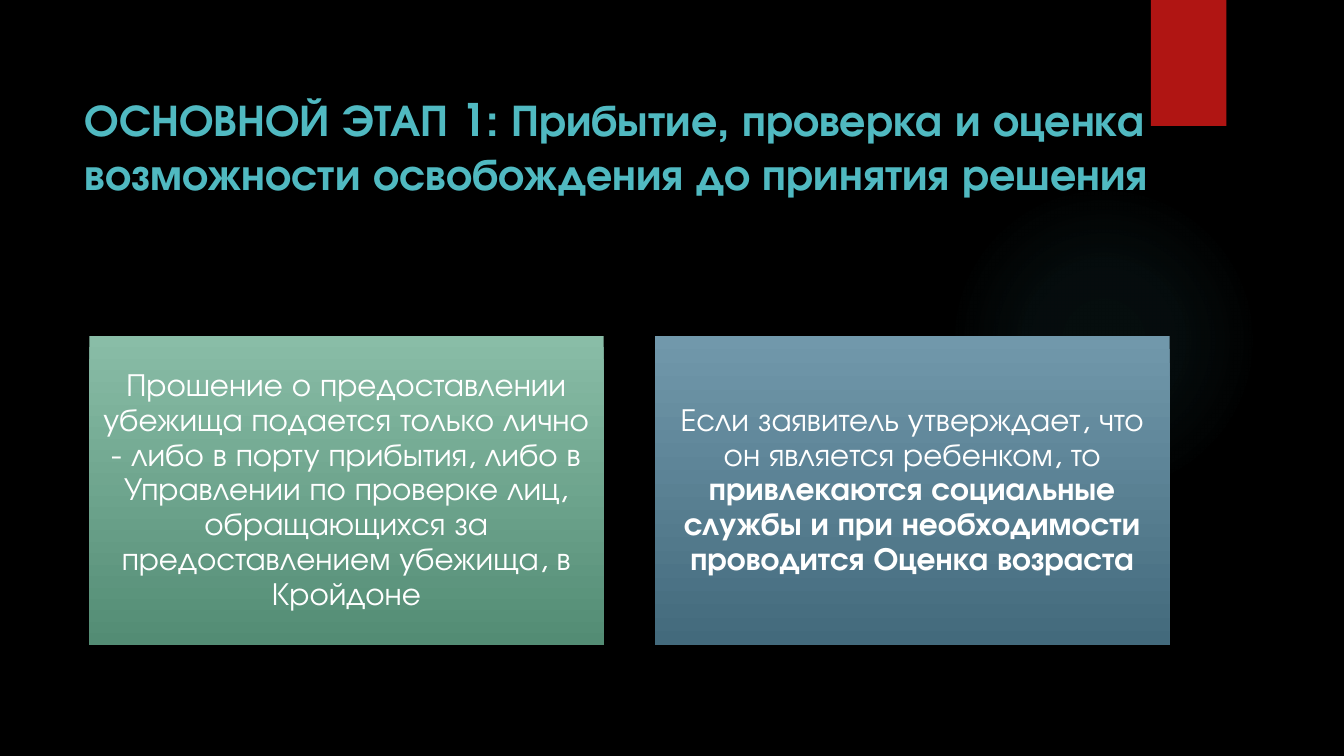
from pptx import Presentation
from pptx import util as u
from pptx.dml.color import RGBColor
from pptx.enum import shapes, text
from pptx.oxml import parse_xml
from pptx.oxml.ns import nsdecls, qn

COLORS = {
    "background": "000000",
    "accent": "50B9C1",
    "tab": "B01513",
    "text": "FFFFFF",
    "green_top": "89BDA7",
    "green_bottom": "538C74",
    "blue_top": "7198AB",
    "blue_bottom": "436A7C",
}
LINEAR_DOWN = '<a:lin ang="5400000" scaled="0"/>'
FROM_CENTRE = ('<a:path path="circle"><a:fillToRect l="50000" t="50000" '
               'r="50000" b="50000"/></a:path>')

CARD_LEFT, CARD_TOP, CARD_WIDTH, CARD_HEIGHT, CARD_GAP = 85, 320, 490, 294, 49
CARDS = [
    ("green", [
        ("Прошение о предоставлении убежища подается только лично - либо в порту "
         "прибытия, либо в Управлении по проверке лиц, обращающихся за "
         "предоставлением убежища, в Кройдоне", False),
    ]),
    ("blue", [
        ("Если заявитель утверждает, что он является ребенком, то ", False),
        ("привлекаются социальные службы и при необходимости проводится "
         "Оценка возраста", True),
    ]),
]


class SlideBuilder:
    FONT = "TeX Gyre Adventor"
    EMU_PER_PX = 9525

    def __init__(self, presentation):
        presentation.slide_width = self.px(1280)
        presentation.slide_height = self.px(720)
        self.slide = presentation.slides.add_slide(presentation.slide_layouts[5])
        fill = self.slide.background.fill
        fill.solid()
        fill.fore_color.rgb = self.color("background")

    def px(self, length):
        return u.Emu(length * self.EMU_PER_PX)

    def color(self, name):
        return RGBColor.from_string(COLORS[name])

    def style_font(self, font, size, color):
        font.name = self.FONT
        font.size = u.Pt(size)
        font.color.rgb = self.color(color)

    def title(self, wording, *box):
        title = self.slide.shapes.title
        title.left, title.top, title.width, title.height = map(self.px, box)
        frame = title.text_frame
        frame.text = wording
        frame.word_wrap = True
        frame.auto_size = text.MSO_AUTO_SIZE.NONE
        frame.vertical_anchor = text.MSO_ANCHOR.TOP
        paragraph = frame.paragraphs[0]
        paragraph.alignment = text.PP_ALIGN.LEFT
        self.style_font(paragraph.font, 32, "accent")
        paragraph.font.bold = True

    def shape(self, kind, *box):
        shape = self.slide.shapes.add_shape(kind, *map(self.px, box))
        shape.shadow.inherit = False
        shape.line.fill.background()
        return shape

    def gradient(self, shape, stops, direction):
        """Fill with (position %, colour name, opacity %) stops."""
        stop_xml = "".join(
            f'<a:gs pos="{position * 1000}"><a:srgbClr val="{COLORS[name]}">'
            f'<a:alpha val="{opacity * 1000}"/></a:srgbClr></a:gs>'
            for position, name, opacity in stops)
        shape.fill.background()
        properties = shape.element.spPr
        properties.replace(properties.find(qn("a:noFill")), parse_xml(
            f'<a:gradFill {nsdecls("a")} rotWithShape="1">'
            f'<a:gsLst>{stop_xml}</a:gsLst>{direction}</a:gradFill>'))

    def glow(self, *box):
        oval = self.shape(shapes.MSO_SHAPE.OVAL, *box)
        stops = [(0, "accent", 7), (36, "accent", 6), (69, "accent", 0)]
        self.gradient(oval, stops, FROM_CENTRE)

    def tab(self, *box):
        tab = self.shape(shapes.MSO_SHAPE.RECTANGLE, *box)
        tab.fill.solid()
        tab.fill.fore_color.rgb = self.color("tab")

    def card(self, tone, runs, *box):
        card = self.shape(shapes.MSO_SHAPE.RECTANGLE, *box)
        stops = [(0, f"{tone}_top", 100), (100, f"{tone}_bottom", 100)]
        self.gradient(card, stops, LINEAR_DOWN)
        frame = card.text_frame
        frame.word_wrap = True
        frame.vertical_anchor = text.MSO_ANCHOR.MIDDLE
        frame.margin_left = frame.margin_right = u.Inches(0.1)
        frame.margin_top = frame.margin_bottom = u.Inches(0.1)
        paragraph = frame.paragraphs[0]
        paragraph.alignment = text.PP_ALIGN.CENTER
        paragraph.line_spacing = 0.9
        for wording, bold in runs:
            run = paragraph.add_run()
            run.text = wording
            self.style_font(run.font, 23, "text")
            run.font.bold = bold


def main():
    presentation = Presentation()
    builder = SlideBuilder(presentation)
    builder.glow(903, 176, 296, 296)
    builder.tab(1096, 0, 72, 120)
    builder.title("ОСНОВНОЙ ЭТАП 1: Прибытие, проверка и оценка возможности "
                  "освобождения до принятия решения", 71, 83, 1036, 147)
    for index, (tone, runs) in enumerate(CARDS):
        left = CARD_LEFT + index * (CARD_WIDTH + CARD_GAP)
        builder.card(tone, runs, left, CARD_TOP, CARD_WIDTH, CARD_HEIGHT)
    presentation.save("out.pptx")


if __name__ == "__main__":
    main()
